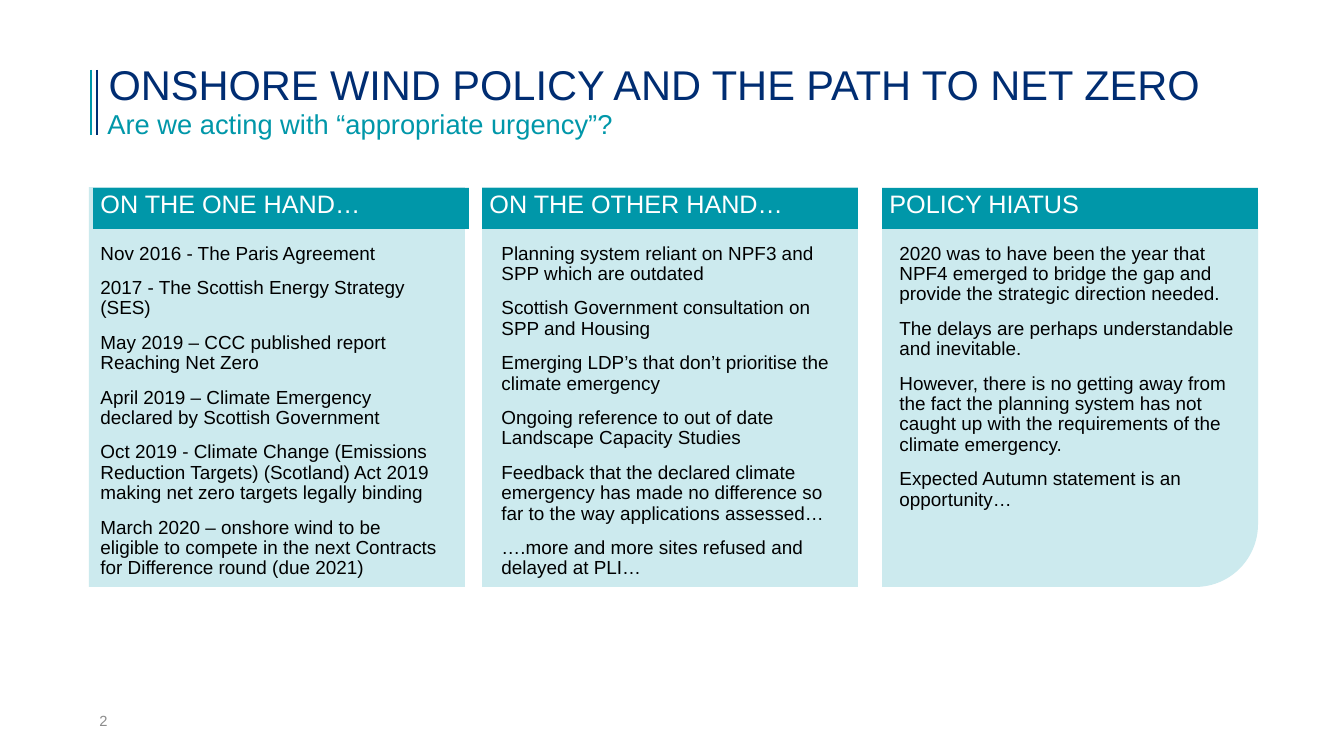
from lxml import etree
from pptx import Presentation
from pptx.dml.color import RGBColor
from pptx.enum.shapes import MSO_CONNECTOR, MSO_SHAPE
from pptx.enum.text import MSO_ANCHOR, MSO_AUTO_SIZE, PP_ALIGN
from pptx.oxml.ns import qn
from pptx.util import Pt

PX = 12095
NAVY = RGBColor(0x00, 0x2D, 0x72)
TEAL = RGBColor(0x00, 0x97, 0xA9)
PALE_TEAL = RGBColor(0xCC, 0xEA, 0xEE)
GREY = RGBColor(0x8C, 0x8C, 0x8C)
BLACK = RGBColor(0, 0, 0)
WHITE = RGBColor(255, 255, 255)


def px(*lengths):
    return [length * PX for length in lengths]


def write(shape, *paragraphs, size, color, anchor=MSO_ANCHOR.TOP, spacing=0.9, gap=13.3):
    frame = shape.text_frame
    frame.word_wrap = True
    frame.auto_size = MSO_AUTO_SIZE.NONE
    frame.vertical_anchor = anchor
    for index, text in enumerate(paragraphs):
        paragraph = frame.add_paragraph() if index else frame.paragraphs[0]
        paragraph.text = text
        paragraph.alignment = PP_ALIGN.LEFT
        paragraph.line_spacing = spacing
        paragraph.space_before = Pt(gap if index else 0)
        paragraph.font.name = "Arial"
        paragraph.font.size = Pt(size)
        paragraph.font.color.rgb = color


prs = Presentation()
prs.slide_width, prs.slide_height = px(1344, 756)
slide = prs.slides.add_slide(prs.slide_layouts[5])
shapes = slide.shapes

title = shapes.title
title.left, title.top, title.width, title.height = px(101, 40, 1142, 95)
write(title, "ONSHORE WIND POLICY AND THE PATH TO NET ZERO",
      size=39.6, color=NAVY, anchor=MSO_ANCHOR.MIDDLE)

subtitle = shapes.add_textbox(*px(100, 107, 1142, 56))
write(subtitle, "Are we acting with “appropriate urgency”?", size=26, color=TEAL)

for x, color in ((97, NAVY), (91, TEAL)):
    title_bar = shapes.add_connector(MSO_CONNECTOR.STRAIGHT, *px(x, 70, x, 135))
    title_bar.line.color.rgb = color
    title_bar.line.width = Pt(1.5)
    etree.SubElement(title_bar._element.spPr, qn("a:effectLst"))

columns = [
    (89, 93, 93, 358, 429, MSO_SHAPE.RECTANGLE, "ON THE ONE HAND…", [
        "Nov 2016 - The Paris Agreement",
        "2017 - The Scottish Energy Strategy (SES)",
        "May 2019 – CCC published report Reaching Net Zero",
        "April 2019 – Climate Emergency declared by Scottish Government",
        "Oct 2019 - Climate Change (Emissions Reduction Targets) (Scotland) Act 2019 "
        "making net zero targets legally binding",
        "March 2020 – onshore wind to be eligible to compete in the next Contracts "
        "for Difference round (due 2021)",
    ]),
    (482, 482, 494, 355, 409, MSO_SHAPE.RECTANGLE, "ON THE OTHER HAND…", [
        "Planning system reliant on NPF3 and SPP which are outdated",
        "Scottish Government consultation on SPP and Housing",
        "Emerging LDP’s that don’t prioritise the climate emergency",
        "Ongoing reference to out of date Landscape Capacity Studies",
        "Feedback that the declared climate emergency has made no difference so far "
        "to the way applications assessed…",
        "….more and more sites refused and delayed at PLI…",
    ]),
    (882, 882, 892, 351, 274, MSO_SHAPE.ROUND_1_RECTANGLE, "POLICY HIATUS", [
        "2020 was to have been the year that NPF4 emerged to bridge the gap and "
        "provide the strategic direction needed.",
        "The delays are perhaps understandable and inevitable.",
        "However, there is no getting away from the fact the planning system has not "
        "caught up with the requirements of the climate emergency.",
        "Expected Autumn statement is an opportunity…",
    ]),
]

for panel_x, heading_x, points_x, points_w, points_h, outline, heading_text, points_text in columns:
    panel_top = 187 if outline == MSO_SHAPE.RECTANGLE else 203
    panel = shapes.add_shape(outline, *px(panel_x, panel_top, 376, 587 - panel_top))
    panel._element.spPr.find(qn("a:xfrm")).set("flipV", "1")
    heading = shapes.add_shape(MSO_SHAPE.RECTANGLE, *px(heading_x, 188, 376, 41))
    for block, color in ((panel, PALE_TEAL), (heading, TEAL)):
        block.shadow.inherit = False
        block.fill.solid()
        block.fill.fore_color.rgb = color
        block.line.fill.background()
    write(heading, heading_text, size=24, color=WHITE)
    points = shapes.add_textbox(*px(points_x, 240, points_w, points_h))
    write(points, *points_text, size=18, color=BLACK)

page_number = shapes.add_textbox(*px(92, 701, 62, 40))
write(page_number, "2", size=14, color=GREY, anchor=MSO_ANCHOR.MIDDLE, spacing=1.0)

prs.save("out.pptx")
